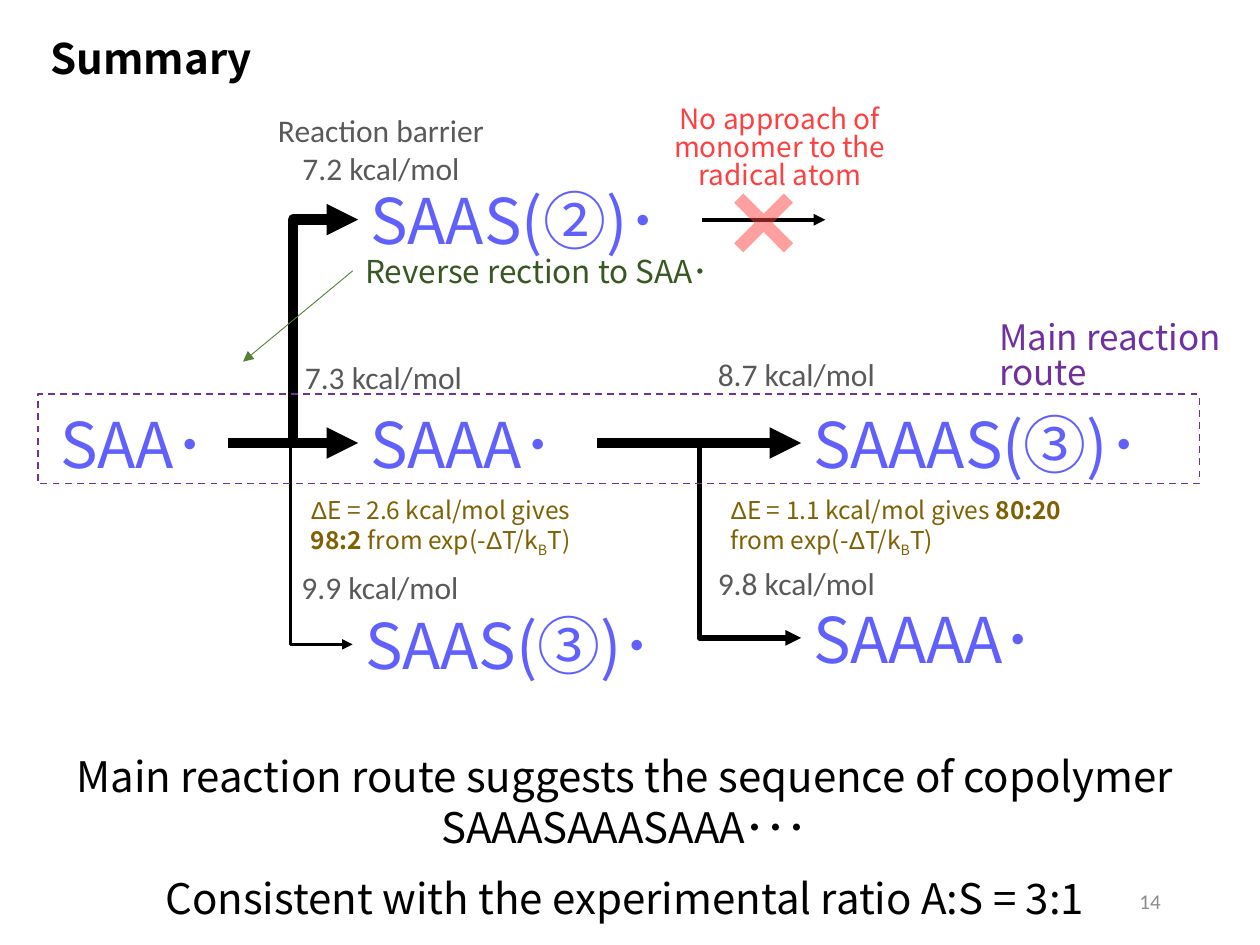
from lxml import etree
from pptx import Presentation
from pptx import util as u
from pptx.dml import color
from pptx.enum import dml, shapes, text
from pptx.oxml import ns


class Theme:
    sans, plain, greek = "Noto Sans CJK JP", "Calibri", "Arial"
    black, blue, red = "000000", "6060FF", "FF4040"
    green, leaf, purple = "385723", "548235", "7030A0"
    gray, pale, gold = "595959", "8C8C8C", "806000"
    # name: (font, size, colour)
    looks = {
        "title": (sans, 24, black),
        "state": (sans, 36, blue),
        "value": (plain, 18, gray),
        "block": (sans, 16, red),
        "back": (sans, 18, green),
        "route": (sans, 20, purple),
        "ratio": (sans, 14, gold),
        "page": (plain, 12, pale),
    }


def write(box, paras, look, place, anchor=text.MSO_ANCHOR.TOP,
          grow=text.MSO_AUTO_SIZE.SHAPE_TO_FIT_TEXT, **form):
    """Place a box; each paragraph is a list of (text, font values, baseline)."""
    for key, val in zip(("left", "top", "width", "height"), place):
        setattr(box, key, u.Cm(val))
    frame = box.text_frame
    for key, val in dict(word_wrap=True, auto_size=grow,
                         vertical_anchor=anchor).items():
        setattr(frame, key, val)
    face, size, tint = Theme.looks[look]
    for i, parts in enumerate(paras):
        para = frame.add_paragraph() if i else frame.paragraphs[0]
        for key, val in form.items():
            setattr(para, key, val)
        for words, extra, base in parts:
            run = para.add_run()
            run.text = words
            values = dict(name=face, size=u.Pt(size), bold=False) | extra
            for key, val in values.items():
                setattr(run.font, key, val)
            run.font.color.rgb = color.RGBColor.from_string(tint)
            props = run.font._element
            if base:
                props.set("baseline", str(base))
            if face == Theme.sans:
                etree.SubElement(props, ns.qn("a:ea"), typeface=face)
    return box


def wire(kind, start, end, weight, tint=Theme.black):
    """Draw an arrow between two points given as EMU pairs."""
    line = slide.shapes.add_connector(kind, *start, *end)
    line.line.width = u.Pt(weight)
    line.line.color.rgb = color.RGBColor.from_string(tint)
    etree.SubElement(line.line._get_or_add_ln(), ns.qn("a:tailEnd"), type="triangle")
    etree.SubElement(line._element.spPr, ns.qn("a:effectLst"))
    return line


deck = Presentation()
deck.slide_width, deck.slide_height = u.Cm(25.4), u.Cm(19.05)
slide = deck.slides.add_slide(deck.slide_layouts[5])
left, mid, right = text.PP_ALIGN.LEFT, text.PP_ALIGN.CENTER, text.PP_ALIGN.RIGHT
center = text.MSO_ANCHOR.MIDDLE
straight, elbow = shapes.MSO_CONNECTOR.STRAIGHT, shapes.MSO_CONNECTOR.ELBOW

# Title
write(slide.shapes.title, [[("Summary", {"bold": True}, 0)]], "title",
      (0.76, 0.53, 23.67, 1.27), alignment=left)

# Radical states: key, text, left, top, width
states = {}
for key, words, x, y, w in [
    ("start", "SAA･", 0.76, 8.03, 3.84),
    ("top", "SAAS(②)･", 7.22, 3.53, 6.93),
    ("main", "SAAA･", 7.22, 8.03, 4.82),
    ("low", "SAAS(③)･", 7.11, 12.09, 6.93),
    ("goal", "SAAAS(③)･", 16.15, 8.03, 8.03),
    ("side", "SAAAA･", 16.15, 11.96, 5.89),
]:
    states[key] = write(slide.shapes.add_textbox(0, 0, 0, 0), [[(words, {}, 0)]],
                        "state", (x, y, w, 1.8), center,
                        alignment=mid if key == "start" else left)

# Reaction arrows; a heavier line is a more likely step
for a, b, weight in [("start", "top", 6), ("start", "main", 6), ("start", "low", 1.5),
                     ("main", "goal", 6), ("main", "side", 3)]:
    src, dest = states[a], states[b]
    begin = src.left + src.width, src.top + src.height // 2
    end = dest.left, dest.top + dest.height // 2
    level = begin[1] == end[1]
    line = wire(straight if level else elbow, begin, end, weight)
    if level:
        line.begin_connect(src, 3)
        line.end_connect(dest, 1)

# Blocked step
line = wire(straight, (u.Cm(14.15), u.Cm(4.43)), (u.Cm(16.64), u.Cm(4.43)), 2.25)
line.begin_connect(states["top"], 3)
cross = slide.shapes.add_shape(shapes.MSO_SHAPE.MATH_MULTIPLY, u.Cm(14.43), u.Cm(3.53),
                               u.Cm(1.93), u.Cm(1.93))
cross.shadow.inherit = False
cross.adjustments[0] = 0.136
cross.fill.solid()
cross.fill.fore_color.rgb = color.RGBColor.from_string(Theme.red)
tone = cross.fill._xPr.find(ns.qn("a:solidFill"))[0]
etree.SubElement(tone, ns.qn("a:alpha"), val="50000")
cross.line.fill.background()

# Barriers and notes: paragraphs, look, place, format
notes = [
    (["Reaction barrier 7.2 kcal/mol"], "value", (5.23, 2.11, 4.9, 1.8), mid, {}),
    (["7.3 kcal/mol"], "value", (5.28, 7.09, 4.9, 1.02), mid, {}),
    (["9.9 kcal/mol"], "value", (5.21, 11.33, 4.9, 1.02), mid, {}),
    (["8.7 kcal/mol"], "value", (14.22, 7.04, 4.9, 1.02), left, {}),
    (["9.8 kcal/mol"], "value", (14.22, 11.25, 4.9, 1.02), left, {}),
    (["No approach of monomer to the radical atom"], "block",
     (13.08, 2.03, 5.28, 2.01), mid, {"line_spacing": u.Pt(16)}),
    (["Main reaction", "route"], "route",
     (19.89, 6.38, 5.18, 1.73), left, {"line_spacing": u.Pt(20)}),
    (["Main reaction route suggests the sequence of copolymer SAAASAAASAAA･･･",
      "Consistent with the experimental ratio A:S = 3:1"], "title",
     (0.76, 15.01, 23.67, 3.76), mid, {"space_after": u.Pt(12)}),
]
for paras, look, place, align, form in notes:
    write(slide.shapes.add_textbox(0, 0, 0, 0), [[(p, {}, 0)] for p in paras],
          look, place, alignment=align, **form)

# Reverse reaction
back = write(slide.shapes.add_textbox(0, 0, 0, 0), [[("Reverse rection to SAA･", {}, 0)]],
             "back", (7.11, 4.95, 8.13, 1.02), alignment=left)
line = wire(straight, (u.Cm(7.11), u.Cm(5.46)), (u.Cm(4.9), u.Cm(7.29)), 0.5, Theme.leaf)
line.begin_connect(back, 1)

# Frame of the main route
frame = slide.shapes.add_shape(shapes.MSO_SHAPE.RECTANGLE, u.Cm(0.76), u.Cm(7.95),
                               u.Cm(23.42), u.Cm(1.8))
frame.shadow.inherit = False
frame.fill.background()
frame.line.color.rgb = color.RGBColor.from_string(Theme.purple)
frame.line.width = u.Pt(1)
frame.line.dash_style = dml.MSO_LINE.DASH

# Branching ratios
delta = ("Δ", {"name": Theme.greek}, 0)
for gap, ratio, x, w in [("2.6", "98:2", 6.02, 6.53), ("1.1", "80:20", 14.48, 7.42)]:
    parts = [delta, (f"E = {gap} kcal/mol gives ", {}, 0), (ratio, {"bold": True}, 0),
             (" from exp(-", {}, 0), delta, ("T/k", {}, 0), ("B", {}, -25000), ("T)", {}, 0)]
    write(slide.shapes.add_textbox(0, 0, 0, 0), [parts], "ratio", (x, 9.86, w, 1.45),
          alignment=left)

# Page number
write(slide.shapes.add_textbox(0, 0, 0, 0), [[("14", {}, 0)]], "page",
      (17.93, 17.65, 5.72, 1.02), center, text.MSO_AUTO_SIZE.NONE, alignment=right)

deck.save("out.pptx")
